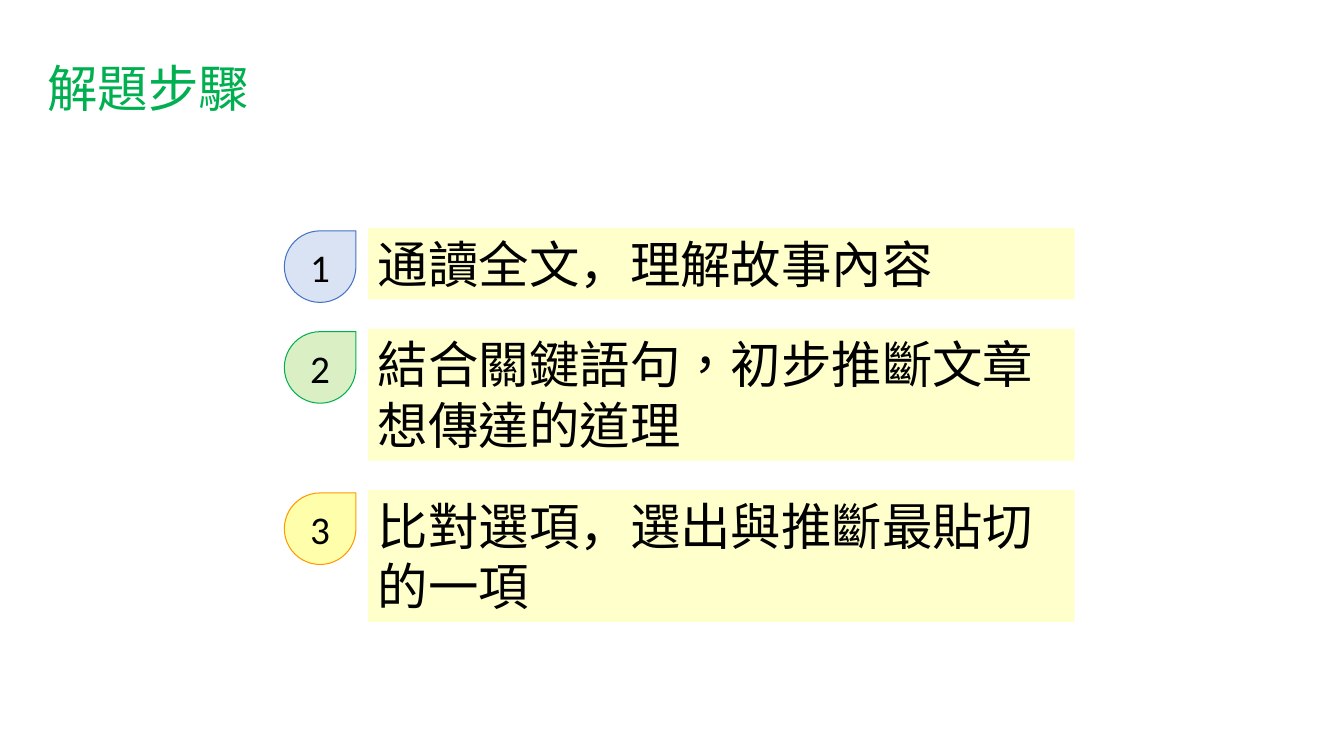
from lxml.etree import SubElement
from pptx import Presentation
from pptx.dml.color import RGBColor
from pptx.enum.shapes import MSO_SHAPE as SHAPE
from pptx.enum.text import MSO_ANCHOR as ANCHOR, MSO_AUTO_SIZE as AUTO, PP_ALIGN as ALIGN
from pptx.oxml.ns import qn
from pptx.util import Inches, Pt

CJK = "Noto Sans CJK SC"
STEPS = [
    ("通讀全文，理解故事內容", "zh-CN", 0.71, "8FAADC", "4472C4"),
    ("結合關鍵語句，初步推斷文章想傳達的道理", "zh-TW", 1.31, "92D050", "00B050"),
    ("比對選項，選出與推斷最貼切的一項", "zh-CN", 1.31, "FFFF00", "FF9900"),
]


def rgb(value):
    return RGBColor.from_string(value)


def add_run(p, text, size, color, font="Calibri", lang="zh-CN"):
    r = p.add_run()
    r.text = text
    r.font.size = Pt(size)
    r.font.color.rgb = rgb(color)
    r.font.name = font
    rPr = r.font._element
    rPr.set("lang", lang)
    SubElement(rPr, qn("a:ea")).set("typeface", CJK)


def add_filled(slide, kind, x, y, w, h, fill):
    sp = slide.shapes.add_shape(kind, Inches(x), Inches(y), Inches(w), Inches(h))
    sp.shadow.inherit = False
    sp.fill.solid()
    sp.fill.fore_color.rgb = rgb(fill)
    return sp


def add_title(slide, x, y, w, h):
    sp = slide.shapes.add_textbox(Inches(x), Inches(y), Inches(w), Inches(h))
    tf = sp.text_frame
    tf.word_wrap = False
    tf.auto_size = AUTO.SHAPE_TO_FIT_TEXT
    add_run(tf.paragraphs[0], "解題步驟", 36, "00B050", CJK)


def add_marker(slide, x, y, size, number, fill, line):
    sp = add_filled(slide, SHAPE.TEAR, x, y, size, size, fill)
    color = sp.fill._xPr.find(qn("a:solidFill"))[0]
    SubElement(color, qn("a:alpha")).set("val", "33000")
    sp.line.color.rgb = rgb(line)
    sp.line.width = Pt(0.75)
    tf = sp.text_frame
    tf.margin_left = tf.margin_right = tf.margin_top = tf.margin_bottom = 0
    tf.vertical_anchor = ANCHOR.MIDDLE
    p = tf.paragraphs[0]
    p.alignment = ALIGN.CENTER
    add_run(p, str(number), 28, "000000")


def add_step_text(slide, x, y, w, h, text, lang):
    sp = add_filled(slide, SHAPE.RECTANGLE, x, y, w, h, "FFFFCC")
    sp.line.fill.background()
    tf = sp.text_frame
    tf.word_wrap = True
    tf.auto_size = AUTO.SHAPE_TO_FIT_TEXT
    tf.vertical_anchor = ANCHOR.TOP
    p = tf.paragraphs[0]
    p.alignment = ALIGN.LEFT
    add_run(p, text, 36, "000000", lang=lang)


def add_steps(slide, x, y, w, gap=0.29, marker=0.71, indent=0.83):
    for number, (text, lang, h, fill, line) in enumerate(STEPS, 1):
        add_step_text(slide, x + indent, y, w - indent, h, text, lang)
        add_marker(slide, x, y + 0.03, marker, number, fill, line)
        y += h + gap


def main():
    prs = Presentation()
    prs.slide_width, prs.slide_height = Inches(13.33), Inches(7.5)
    slide = prs.slides.add_slide(prs.slide_layouts[6])
    add_steps(slide, 2.82, 2.26, 7.84)
    add_title(slide, 0.37, 0.52, 2.22, 0.71)
    prs.save("out.pptx")


if __name__ == "__main__":
    main()
